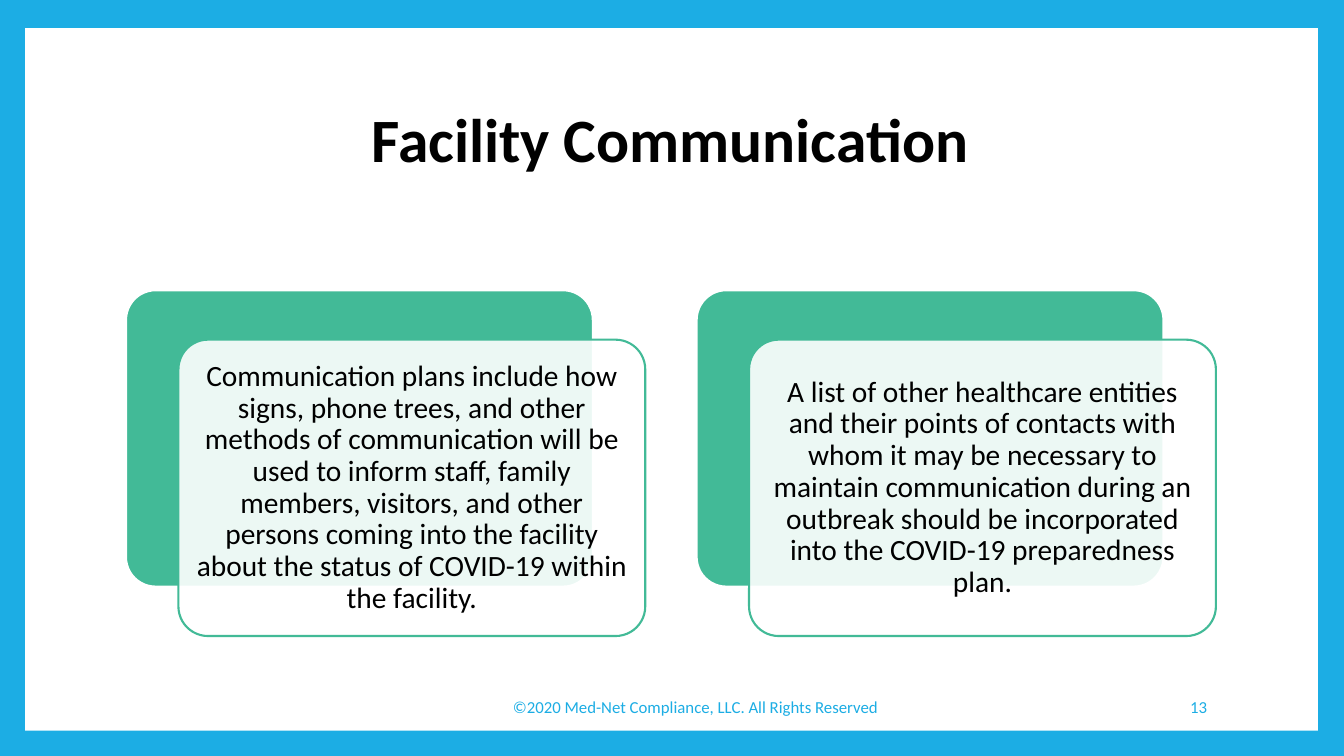
from lxml import etree
from pptx import Presentation
from pptx.dml.color import RGBColor
from pptx.enum.shapes import MSO_SHAPE as Shape
from pptx.enum.text import MSO_ANCHOR as Anchor, PP_ALIGN as Align
from pptx.oxml.ns import qn
from pptx.util import Inches, Pt

BLUE = RGBColor(0x1C, 0xAD, 0xE4)
GREEN = RGBColor(0x42, 0xBA, 0x97)
WHITE = RGBColor(0xFF, 0xFF, 0xFF)
BLACK = RGBColor(0x00, 0x00, 0x00)

SLIDE_W, SLIDE_H = 13.33, 7.5
MARGIN = 1.25
CARD_W, CARD_H = 4.63, 2.94
CARD_TOP = 2.88
CARD_PITCH = 5.66
FRONT_SHIFT_X, FRONT_SHIFT_Y = 0.52, 0.49
FOOTER_TOP, FOOTER_H = 6.81, 0.4

CARD_TEXTS = [
    "Communication plans include how signs, phone trees, and other methods of "
    "communication will be used to inform staff, family members, visitors, and other "
    "persons coming into the facility about the status of COVID-19 within the facility.",
    "A list of other healthcare entities and their points of contacts with whom it may "
    "be necessary to maintain communication during an outbreak should be incorporated "
    "into the COVID-19 preparedness plan.",
]


def write(holder, text, size, color, align=Align.CENTER, bold=False, spacing=1.0):
    frame = holder.text_frame
    frame.word_wrap = True
    frame.vertical_anchor = Anchor.MIDDLE
    paragraph = frame.paragraphs[0]
    paragraph.text = text
    paragraph.alignment = align
    paragraph.line_spacing = spacing
    font = paragraph.font
    font.name, font.size, font.bold = "Calibri", Pt(size), bold
    font.color.rgb = color


def add_label(slide, box, text, size, color, **style):
    label = slide.shapes.add_textbox(*map(Inches, box))
    write(label, text, size, color, **style)


def add_panel(slide, kind, box, fill, line=None):
    panel = slide.shapes.add_shape(kind, *map(Inches, box))
    panel.shadow.inherit = False
    panel.fill.solid()
    panel.fill.fore_color.rgb = fill
    if line is None:
        panel.line.fill.background()
    else:
        panel.line.color.rgb = line
        panel.line.width = Pt(1.5)
    if kind == Shape.ROUNDED_RECTANGLE:
        panel.adjustments[0] = 0.1
    return panel


def set_opacity(panel, percent):
    color = panel.fill._xPr.find(qn("a:solidFill"))[0]
    etree.SubElement(color, qn("a:alpha")).set("val", str(percent * 1000))


def add_card(slide, left, text):
    """Green backing with a translucent, outlined text panel shifted over it."""
    rounded = Shape.ROUNDED_RECTANGLE
    add_panel(slide, rounded, (left, CARD_TOP, CARD_W, CARD_H), GREEN, WHITE)
    front_box = (left + FRONT_SHIFT_X, CARD_TOP + FRONT_SHIFT_Y, CARD_W, CARD_H)
    front = add_panel(slide, rounded, front_box, WHITE, GREEN)
    set_opacity(front, 90)
    frame = front.text_frame
    frame.margin_left = frame.margin_right = Inches(0.09)
    frame.margin_top = frame.margin_bottom = Inches(0.09)
    write(front, text, 21, BLACK, spacing=0.9)


def main():
    deck = Presentation()
    deck.slide_width, deck.slide_height = Inches(SLIDE_W), Inches(SLIDE_H)
    slide = deck.slides.add_slide(deck.slide_layouts[6])
    slide.background.fill.solid()
    slide.background.fill.fore_color.rgb = BLUE

    add_panel(slide, Shape.RECTANGLE, (0.25, 0.28, 12.82, 6.97), WHITE)
    add_label(slide, (MARGIN, 0.67, 10.8, 1.48), "Facility Communication",
              44, BLACK, bold=True, spacing=0.9)
    for column, text in enumerate(CARD_TEXTS):
        add_card(slide, MARGIN + column * CARD_PITCH, text)

    add_label(slide, (4.32, FOOTER_TOP, 5.16, FOOTER_H),
              "©2020 Med-Net Compliance, LLC. All Rights Reserved", 12, BLUE)
    add_label(slide, (10.2, FOOTER_TOP, 1.87, FOOTER_H), "13", 12, BLUE, align=Align.RIGHT)
    deck.save("out.pptx")


if __name__ == "__main__":
    main()
